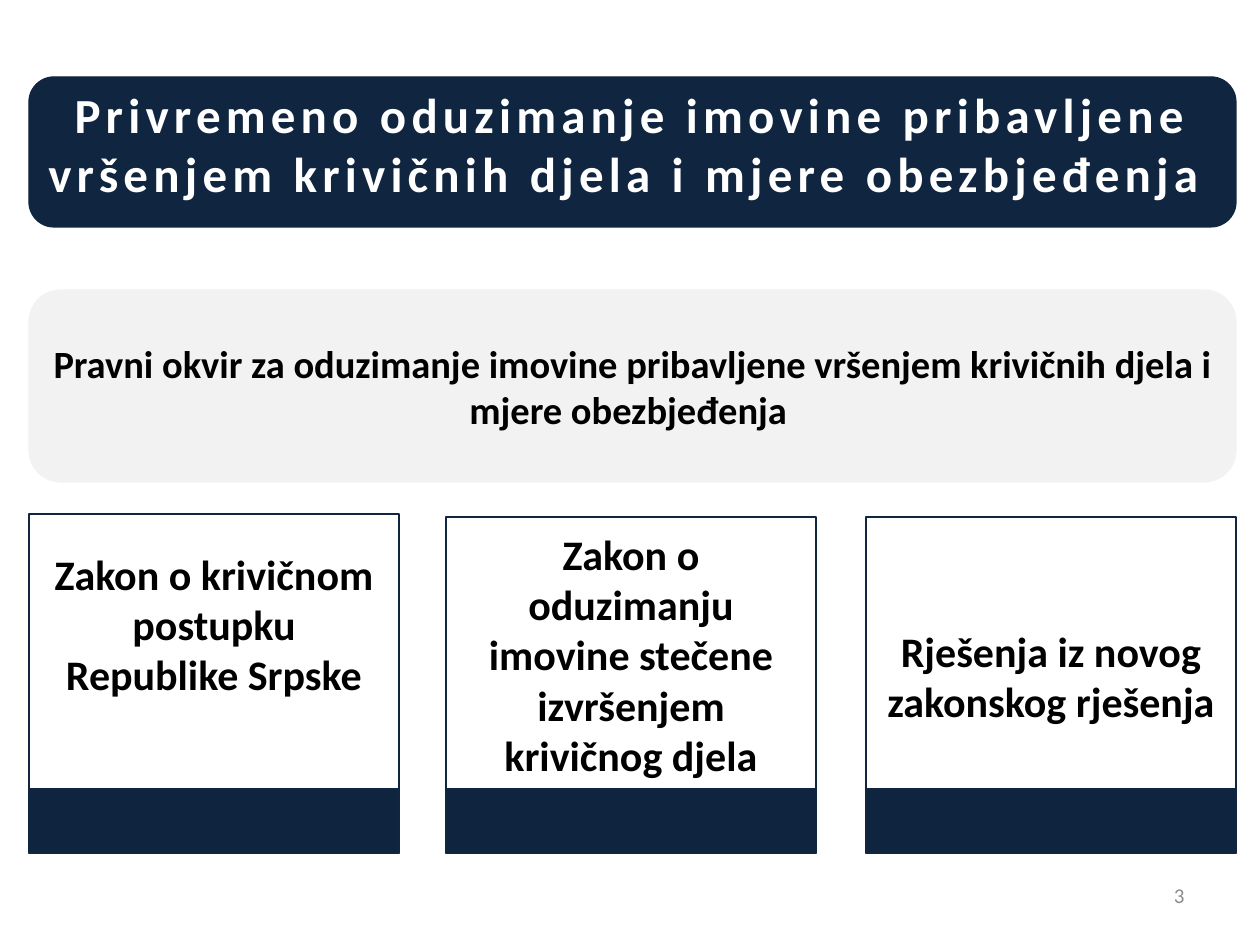
import dataclasses

import pptx
import pptx.dml.color
import pptx.enum.shapes
import pptx.enum.text
import pptx.util

SHAPES = pptx.enum.shapes.MSO_SHAPE
ALIGN = pptx.enum.text.PP_ALIGN
ANCHOR = pptx.enum.text.MSO_ANCHOR
FIT = pptx.enum.text.MSO_AUTO_SIZE


@dataclasses.dataclass(frozen=True)
class Theme:
    font: str = "Calibri"
    navy: str = "10253F"
    footer: str = "0F243E"
    pale: str = "F2F2F2"
    white: str = "FFFFFF"
    black: str = "000000"
    grey: str = "8C8C8C"
    title_size: int = 28
    card_size: int = 24
    panel_size: int = 22
    number_size: int = 12
    line_width: float = 0.75
    title_spacing: int = 300


THEME = Theme()


@dataclasses.dataclass(frozen=True)
class Box:
    left: int
    top: int
    width: int
    height: int

    def strip(self, offset, height):
        return Box(self.left, self.top + offset, self.width, height)

    def emu(self):
        return [px(side) for side in dataclasses.astuple(self)]


def px(length):
    return pptx.util.Emu(round(length * 914400 / 126))


def rgb(value):
    return pptx.dml.color.RGBColor.from_string(value)


def apply_format(target, values):
    for name, value in values.items():
        setattr(target, name, value)


def add_block(page, box, fill, line, kind=SHAPES.RECTANGLE):
    block = page.shapes.add_shape(kind, *box.emu())
    block.shadow.inherit = False
    block.fill.solid()
    block.fill.fore_color.rgb = rgb(fill)
    block.line.color.rgb = rgb(line)
    block.line.width = pptx.util.Pt(THEME.line_width)
    return block


def write_text(shape, text, size, color, bold=True, align=ALIGN.CENTER, anchor=ANCHOR.TOP):
    frame = shape.text_frame
    apply_format(frame, {"word_wrap": True, "auto_size": FIT.NONE, "vertical_anchor": anchor})
    para = frame.paragraphs[0]
    para.alignment = align
    span = para.add_run()
    span.text = text
    apply_format(span.font, {"name": THEME.font, "size": pptx.util.Pt(size), "bold": bold})
    span.font.color.rgb = rgb(color)
    return span


def add_title(page, box, text):
    banner = add_block(page, box, THEME.navy, THEME.navy, SHAPES.ROUNDED_RECTANGLE)
    title = page.shapes.title
    left, top, width, height = box.strip(1, 131).emu()
    apply_format(title, {"left": left, "top": top, "width": width, "height": height})
    span = write_text(title, text, THEME.title_size, THEME.white)
    span.font._element.set("spc", str(THEME.title_spacing))
    banner._element.addnext(title._element)


def add_panel(page, box, text):
    panel = add_block(page, box, THEME.pale, THEME.pale, SHAPES.ROUNDED_RECTANGLE)
    write_text(panel, text, THEME.panel_size, THEME.black, anchor=ANCHOR.MIDDLE)


def add_card(page, box, text, text_offset, text_height):
    footer_height = 64
    add_block(page, box, THEME.white, THEME.navy)
    add_block(page, box.strip(box.height - footer_height, footer_height), THEME.footer, THEME.navy)
    label = page.shapes.add_textbox(*box.strip(text_offset, text_height).emu())
    write_text(label, text, THEME.card_size, THEME.black)


def add_page_number(page, box, text):
    number = page.shapes.add_textbox(*box.emu())
    write_text(number, text, THEME.number_size, THEME.grey, False, ALIGN.RIGHT, ANCHOR.MIDDLE)


def main():
    deck = pptx.Presentation()
    apply_format(deck, {"slide_width": px(1260), "slide_height": px(945)})
    page = deck.slides.add_slide(deck.slide_layouts[5])

    add_title(
        page,
        Box(29, 77, 1207, 150),
        "Privremeno oduzimanje imovine pribavljene vršenjem krivičnih djela i mjere obezbjeđenja ",
    )
    add_panel(
        page,
        Box(29, 290, 1207, 192),
        "Pravni okvir za oduzimanje imovine pribavljene vršenjem krivičnih djela i mjere obezbjeđenja ",
    )

    cards_bottom, card_width = 853, 370
    cards = [
        (29, 514, "Zakon o krivičnom postupku Republike Srpske", 28, 165),
        (446, 517, "Zakon o oduzimanju imovine stečene izvršenjem krivičnog djela", 5, 267),
        (866, 517, "Rješenja iz novog zakonskog rješenja", 102, 115),
    ]
    for left, top, text, text_offset, text_height in cards:
        box = Box(left, top, card_width, cards_bottom - top)
        add_card(page, box, text, text_offset, text_height)

    add_page_number(page, Box(903, 870, 294, 50), "3")
    deck.save("out.pptx")


if __name__ == "__main__":
    main()
